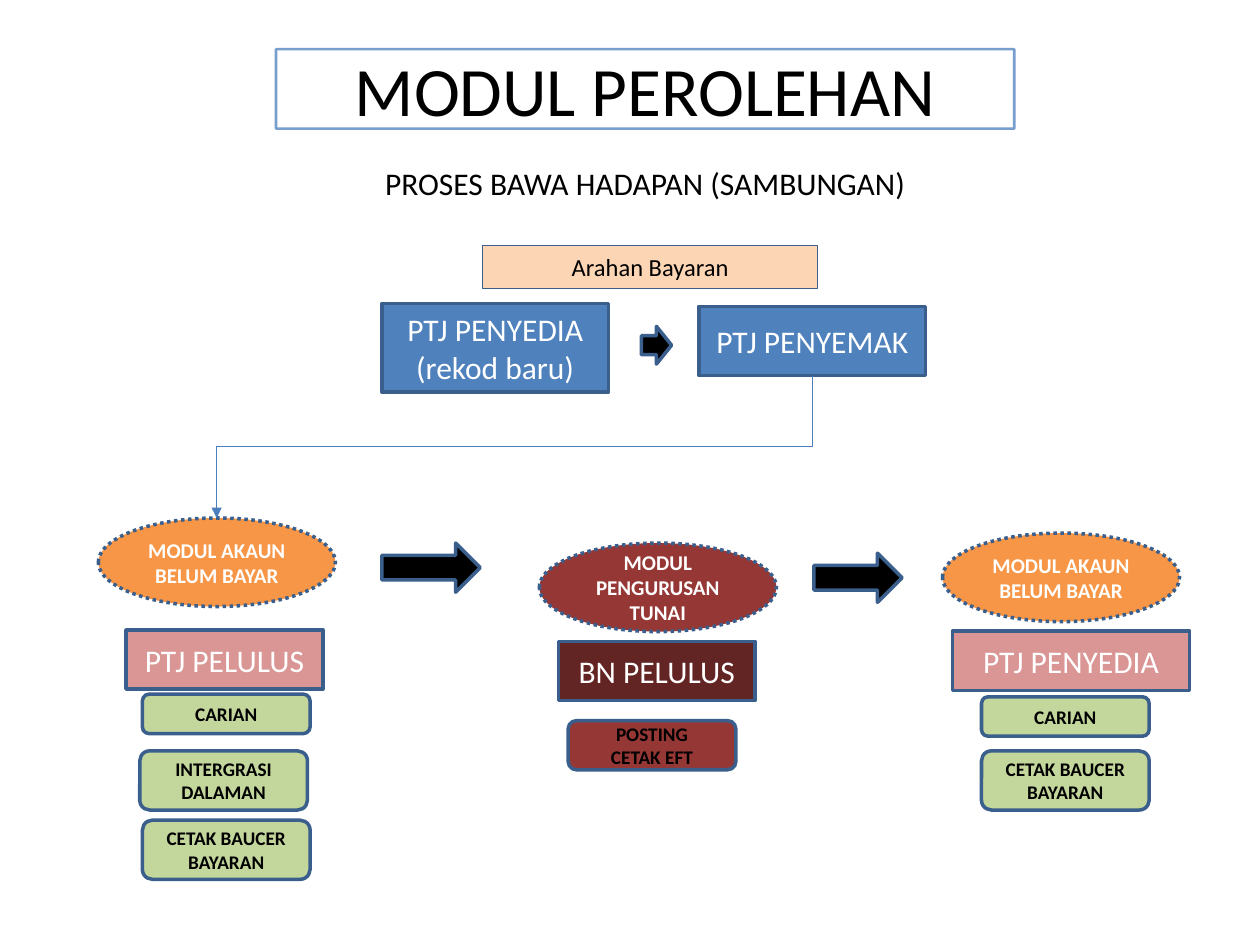
from dataclasses import dataclass
from lxml import etree
from pptx import Presentation
from pptx.dml.color import RGBColor
from pptx.enum.dml import MSO_LINE
from pptx.enum.shapes import MSO_CONNECTOR, MSO_SHAPE
from pptx.enum.text import MSO_ANCHOR, PP_ALIGN
from pptx.oxml.ns import qn
from pptx.util import Pt

RECT, OVAL = MSO_SHAPE.RECTANGLE, MSO_SHAPE.OVAL
ROUNDED, ARROW = MSO_SHAPE.ROUNDED_RECTANGLE, MSO_SHAPE.RIGHT_ARROW
ELBOW, DOTTED = MSO_CONNECTOR.ELBOW, MSO_LINE.ROUND_DOT
CENTER, MIDDLE, TOP = PP_ALIGN.CENTER, MSO_ANCHOR.MIDDLE, MSO_ANCHOR.TOP


@dataclass(frozen=True)
class Theme:
    font: str = "Calibri"
    black: str = "000000"
    white: str = "FFFFFF"
    blue: str = "4F81BD"
    outline: str = "3A5F8C"
    link: str = "4B7EBC"
    peach: str = "FCD5B5"
    orange: str = "F79646"
    pink: str = "D99694"
    red: str = "953735"
    maroon: str = "632523"
    green: str = "C3D69B"
    title: float = 39.6
    role: float = 18
    header: float = 14
    module: float = 12
    task: float = 11


T = Theme()


def rgb(color):
    return RGBColor.from_string(color)


def write(shape, text, size, color, bold=False, anchor=MIDDLE):
    tf = shape.text_frame
    tf.text = text
    tf.word_wrap = True
    tf.vertical_anchor = anchor
    for p in tf.paragraphs:
        p.alignment = CENTER
        p.space_before = Pt(0)
        p.font.name, p.font.size, p.font.bold = T.font, Pt(size), bold
        p.font.color.rgb = rgb(color)


def place(shape, x, y, w, h):
    shape.left, shape.top, shape.width, shape.height = Pt(x), Pt(y), Pt(w), Pt(h)


def add_box(s, kind, x, y, w, h, fill, line=2):
    sp = s.shapes.add_shape(kind, Pt(x), Pt(y), Pt(w), Pt(h))
    sp.shadow.inherit = False
    sp.fill.solid()
    sp.fill.fore_color.rgb = rgb(fill)
    sp.line.color.rgb = rgb(T.outline)
    sp.line.width = Pt(line)
    return sp


def add_role(s, text, x, y, w, h, fill):
    write(add_box(s, RECT, x, y, w, h, fill), text, T.role, T.white)


def add_module(s, text, x, y, fill):
    sp = add_box(s, OVAL, x, y, 135.4, 50.6, fill)
    sp.line.dash_style = DOTTED
    write(sp, text, T.module, T.white, bold=True)


def add_task(s, text, x, y, h, fill=T.green):
    write(add_box(s, ROUNDED, x, y, 95.8, h, fill), text, T.task, T.black, bold=True)


def add_drop_link(s, x1, y1, x2, y2):
    cx, cy = (x1 + x2) / 2, (y1 + y2) / 2
    run, drop = abs(x2 - x1) / 2, (y2 - y1) / 2
    link = s.shapes.add_connector(
        ELBOW, Pt(cx - drop), Pt(cy - run), Pt(cx + drop), Pt(cy + run))
    link.line.color.rgb = rgb(T.link)
    link.line.width = Pt(0.75)
    props = link._element.spPr
    props.find(qn("a:xfrm")).set("rot", "5400000")
    etree.SubElement(props.find(qn("a:ln")), qn("a:tailEnd"), type="triangle")
    etree.SubElement(props, qn("a:effectLst"))


def add_headings(s):
    title, subtitle = s.placeholders
    place(title, 157.7, 28.1, 421.9, 45.4)
    write(title, "MODUL PEROLEHAN", T.title, T.black)
    title.line.color.rgb = rgb(T.blue)
    title.line.width = Pt(1.5)
    color = title._element.spPr.find(".//" + qn("a:srgbClr"))
    etree.SubElement(color, qn("a:alpha"), val="76000")
    place(subtitle, 157.7, 90, 421.9, 28.8)
    write(subtitle, "PROSES BAWA HADAPAN (SAMBUNGAN)", T.role, T.black, anchor=TOP)


def main():
    prs = Presentation()
    prs.slide_width, prs.slide_height = Pt(720), Pt(540)
    s = prs.slides.add_slide(prs.slide_layouts[0])
    add_headings(s)

    header = add_box(s, RECT, 275.8, 140.4, 191.5, 24.5, T.peach, line=0.75)
    write(header, "Arahan Bayaran", T.header, T.black)
    add_role(s, "PTJ PENYEDIA\n(rekod baru)", 218.2, 173.5, 129.6, 50.6, T.blue)
    add_role(s, "PTJ PENYEMAK", 399.4, 175, 129.6, 39.6, T.blue)

    add_module(s, "MODUL AKAUN BELUM BAYAR", 56.2, 296, T.orange)
    add_role(s, "PTJ PELULUS", 72, 360, 112.5, 33.8, T.pink)
    add_task(s, "CARIAN", 81.4, 396.7, 22.5)
    add_task(s, "INTERGRASI DALAMAN", 79.9, 429.1, 33.8)
    add_task(s, "CETAK BAUCER BAYARAN", 81.4, 468.7, 33.8)

    add_module(s, "MODUL PENGURUSAN TUNAI", 308.2, 310.3, T.red)
    add_role(s, "BN PELULUS", 319, 366.5, 112.5, 33.8, T.maroon)
    add_task(s, "POSTING\nCETAK EFT", 324.7, 411.8, 28.1, T.red)

    add_module(s, "MODUL AKAUN BELUM BAYAR", 538.6, 304.6, T.orange)
    add_role(s, "PTJ PENYEDIA", 544.3, 360.7, 135.4, 33.8, T.pink)
    add_task(s, "CARIAN", 560.9, 398.2, 22.5)
    add_task(s, "CETAK BAUCER BAYARAN", 560.9, 429.1, 33.8)

    for x, y, w, h in ((366.5, 186.5, 17.3, 21.6),
                       (218.2, 310.3, 56.2, 28.1),
                       (465.1, 316.1, 50.4, 28.1)):
        add_box(s, ARROW, x, y, w, h, T.black)
    add_drop_link(s, 464.4, 214.6, 123.8, 296)

    prs.save("out.pptx")


if __name__ == "__main__":
    main()
